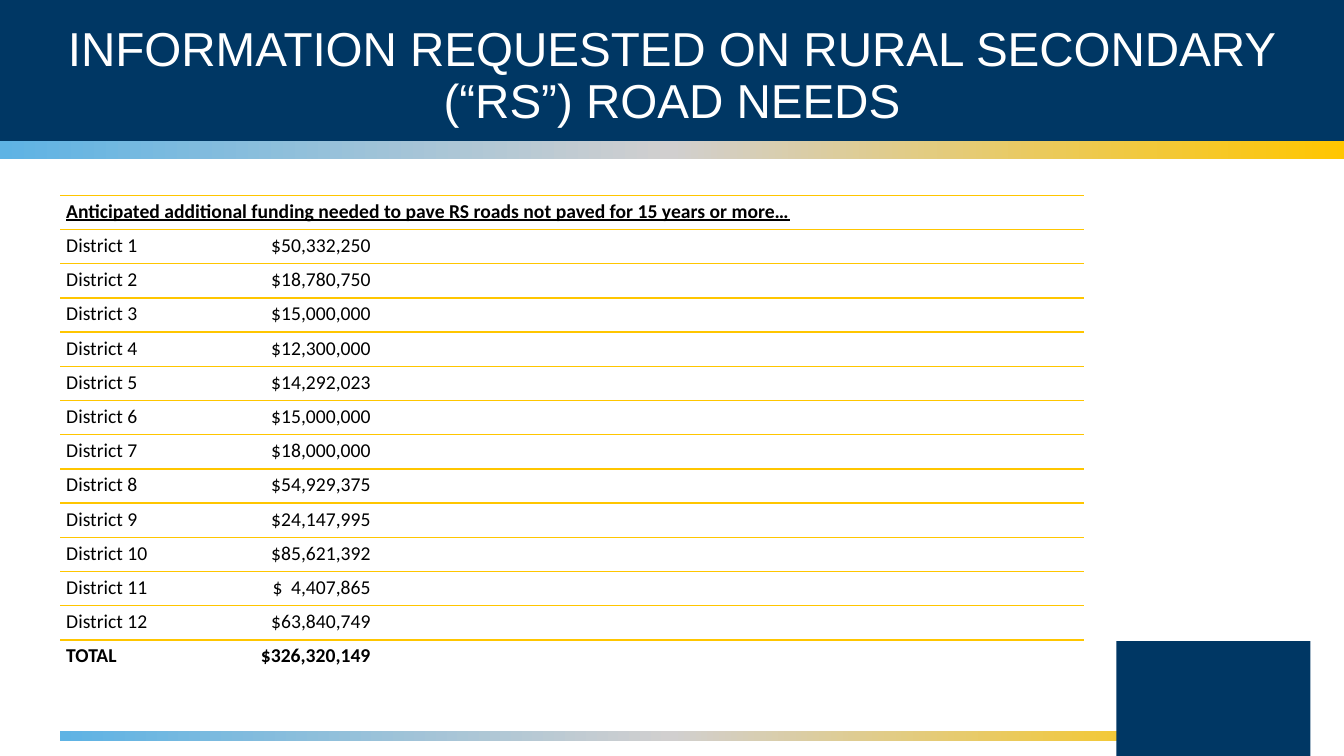
import copy

import pptx
import pptx.dml.color
import pptx.enum.shapes
import pptx.enum.text
import pptx.oxml
import pptx.oxml.ns
import pptx.util

Pt = pptx.util.Pt
Shape = pptx.enum.shapes.MSO_SHAPE
Align = pptx.enum.text.PP_ALIGN
Anchor = pptx.enum.text.MSO_ANCHOR

WIDE, HIGH = 960, 540
HUES = {"navy": "003764", "sky": "5EB3E4", "grey": "D1CFCF",
        "gold": "FFC600", "white": "FFFFFF", "black": "000000"}
HEAD = "INFORMATION REQUESTED ON RURAL SECONDARY (“RS”) ROAD NEEDS"
LEAD = ("Anticipated additional funding needed to pave RS roads "
        "not paved for 15 years or more…")
COSTS = ["$50,332,250", "$18,780,750", "$15,000,000", "$12,300,000",
         "$14,292,023", "$15,000,000", "$18,000,000", "$54,929,375",
         "$24,147,995", "$85,621,392", "$\t4,407,865", "$63,840,749"]
TOTAL = "$326,320,149"
SIGN, EDGE = 147.5, 217.5


def hue(name):
    return pptx.dml.color.RGBColor.from_string(HUES[name])


def write(frame, text, font="Calibri", size=14, color="black", bold=False,
          line=False, align=Align.LEFT, anchor=Anchor.TOP, inset=4.3, tabs=()):
    """Fill a text frame; tabs holds pairs of position and alignment."""
    frame.word_wrap = True
    frame.auto_size = pptx.enum.text.MSO_AUTO_SIZE.NONE
    frame.vertical_anchor = anchor
    frame.margin_left = frame.margin_right = Pt(inset)
    frame.margin_top = frame.margin_bottom = Pt(min(inset, 4.3))
    para = frame.paragraphs[0]
    para.text = text
    para.alignment = align
    para.line_spacing = 0.9
    para.space_before = Pt(0)
    if tabs:
        props = para._p.get_or_add_pPr()
        stops = pptx.oxml.parse_xml(
            "<a:tabLst %s/>" % pptx.oxml.ns.nsdecls("a"))
        for place, side in tabs:
            stop = stops.makeelement(pptx.oxml.ns.qn("a:tab"),
                                     {"pos": str(Pt(place)), "algn": side})
            stops.append(stop)
        props.append(stops)
    style = para.runs[0].font
    style.name, style.size = font, Pt(size)
    style.bold, style.underline = bold, line
    style.color.rgb = hue(color)


def bar(slide, box, *names):
    """Draw a rectangle in one colour, or in a gradient of three."""
    shape = slide.shapes.add_shape(Shape.RECTANGLE, *map(Pt, box))
    shape.shadow.inherit = False
    shape.line.fill.background()
    if len(names) == 1:
        shape.fill.solid()
        shape.fill.fore_color.rgb = hue(names[0])
        return
    shape.fill.gradient()
    shape.fill.gradient_angle = 0
    stops = shape._element.spPr.find(".//" + pptx.oxml.ns.qn("a:gsLst"))
    stops.append(copy.deepcopy(stops[0]))
    for step, (stop, name) in enumerate(zip(shape.fill.gradient_stops, names)):
        stop.position = step / 2
        stop.color.rgb = hue(name)


def rule(slide, left, top, width):
    line = slide.shapes.add_connector(
        pptx.enum.shapes.MSO_CONNECTOR.STRAIGHT,
        Pt(left), Pt(top), Pt(left + width), Pt(top))
    line.line.color.rgb = hue("gold")
    line.line.width = Pt(1)
    line._element.spPr.append(pptx.oxml.parse_xml(
        "<a:effectLst %s/>" % pptx.oxml.ns.nsdecls("a")))


def header(slide, left, top, width, height):
    bar(slide, (left, top, width, height), "navy")
    bar(slide, (left, top + height, width, 12.5), "sky", "grey", "gold")
    title = slide.shapes.title
    slide.shapes._spTree.append(title._element)
    title.left, title.top = Pt(left), Pt(top + 12.2)
    title.width, title.height = Pt(width), Pt(height - 15)
    write(title.text_frame, HEAD, font="Arial", size=34, color="white",
          align=Align.CENTER, anchor=Anchor.MIDDLE, inset=7.2)


def footer(slide, left, top, width, height):
    bar(slide, (left, top, width, height), "sky", "grey", "gold")
    block = 458
    bar(slide, (left + 754.5, block, 138.5, HIGH - block), "navy")


def costs(slide, left, top, width, height):
    """List the heading, the districts and the total, each under a rule."""
    rows = [LEAD]
    rows += [f"District {num}\t{cost}" for num, cost in enumerate(COSTS, 1)]
    rows.append(f"TOTAL\t{TOTAL}")
    step = height / len(rows)
    for num, text in enumerate(rows):
        y = top + num * step
        rule(slide, left, y, width)
        box = slide.shapes.add_textbox(Pt(left), Pt(y), Pt(width), Pt(step))
        tabs = [(SIGN, "l"), (EDGE, "r")][-text.count("\t"):]
        write(box.text_frame, text, bold=text in (rows[0], rows[-1]),
              line=text == LEAD, tabs=tabs if "\t" in text else ())


def main():
    deck = pptx.Presentation()
    deck.slide_width, deck.slide_height = Pt(WIDE), Pt(HIGH)
    slide = deck.slides.add_slide(deck.slide_layouts[5])
    header(slide, 0, 0, WIDE, 100.8)
    footer(slide, 43, 522, 874, 7.2)
    costs(slide, 43, 139.5, 731, 342)
    deck.save("out.pptx")


if __name__ == "__main__":
    main()
